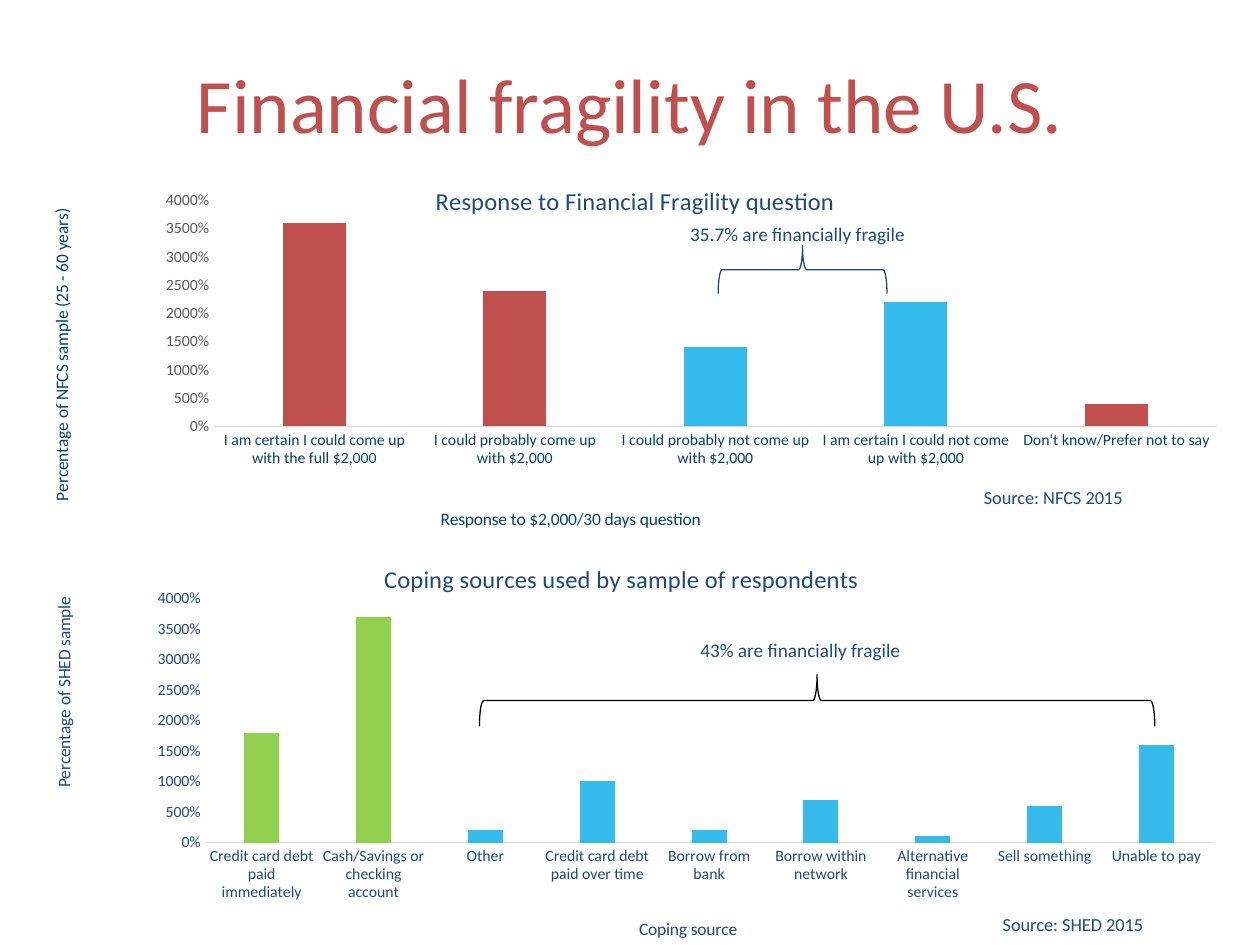
from dataclasses import dataclass

from pptx import Presentation
from pptx.chart.data import CategoryChartData
from pptx.dml.color import RGBColor
from pptx.enum.chart import XL_CHART_TYPE, XL_TICK_MARK
from pptx.enum.shapes import MSO_SHAPE
from pptx.enum.text import MSO_ANCHOR, PP_ALIGN
from pptx.oxml import parse_xml
from pptx.oxml.ns import nsdecls, qn
from pptx.util import Inches, Pt


@dataclass(frozen=True)
class Theme:
    font: str = "Calibri"
    red: str = "C0504D"
    blue: str = "35BAEC"
    green: str = "92D050"
    navy: str = "1F497D"
    teal: str = "054166"
    grey: str = "595959"
    rule: str = "D9D9D9"
    black: str = "000000"
    white: str = "FFFFFF"
    title: float = 44
    chart_title: float = 14
    note: float = 11
    source: float = 10.5
    axis_title: float = 10
    tick: float = 9
    line: float = 0.75


@dataclass(frozen=True)
class Box:
    """Left, top, width and height in percent of the slide."""
    left: float
    top: float
    width: float
    height: float


@dataclass(frozen=True)
class Label:
    """A chart title placed by shares of the chart's size."""
    text: str
    x: float
    y: float
    color: str


@dataclass(frozen=True)
class Bar:
    name: str
    value: float
    color: str


@dataclass(frozen=True)
class Panel:
    box: Box
    plot: tuple[float, float, float, float]
    title: Label
    cat_title: Label
    val_title: Label
    cat_color: str
    val_color: str
    bars: list[Bar]


@dataclass(frozen=True)
class Note:
    text: str
    box: Box
    size: float


@dataclass(frozen=True)
class Brace:
    box: Box
    color: str


T = Theme()
WIDTH, HEIGHT = Inches(10), Inches(7.5)

PANELS = [
    Panel(
        Box(1.8, 16.67, 96.8, 39.87), (0.157, 0.115, 0.822, 0.606),
        Label("Response to Financial Fragility question", 0.335, 0.06, T.navy),
        Label("Response to $2,000/30 days question", 0.34, 0.93, T.teal),
        Label("Percentage of NFCS sample (25 - 60 years)", 0.02, 0.137, T.teal),
        T.teal, T.grey,
        [
            Bar("I am certain I could come up with the full $2,000", 36, T.red),
            Bar("I could probably come up with $2,000", 24, T.red),
            Bar("I could probably not come up with $2,000", 14, T.blue),
            Bar("I am certain I could not come up with $2,000", 22, T.blue),
            Bar("Don't know/Prefer not to say", 4, T.red),
        ],
    ),
    Panel(
        Box(0, 56.53, 97.8, 43.47), (0.167, 0.159, 0.817, 0.602),
        Label("Coping sources used by sample of respondents", 0.308, 0.058, T.navy),
        Label("Coping source", 0.516, 0.94, T.navy),
        Label("Percentage of SHED sample", 0.04, 0.153, T.navy),
        T.navy, T.navy,
        [
            Bar("Credit card debt paid immediately", 18, T.green),
            Bar("Cash/Savings or checking account", 37, T.green),
            Bar("Other", 2, T.blue),
            Bar("Credit card debt paid over time", 10, T.blue),
            Bar("Borrow from bank", 2, T.blue),
            Bar("Borrow within network", 7, T.blue),
            Bar("Alternative financial services", 1, T.blue),
            Bar("Sell something", 6, T.blue),
            Bar("Unable to pay", 16, T.blue),
        ],
    ),
]
BRACES = [
    Brace(Box(61.8, 19.6, 3.8, 17.87), T.navy),
    Brace(Box(62.8, 38.4, 4.1, 71.47), T.black),
]
NOTES = [
    Note("Source: SHED 2015", Box(78.6, 96, 19.3, 3.87), T.source),
    Note("Source: NFCS 2015", Box(77.1, 50.8, 18.3, 3.87), T.source),
    Note("35.7% are financially fragile", Box(53.8, 23.2, 24.4, 0.93), T.note),
    Note("43% are financially fragile", Box(54.6, 66.93, 25.7, 3.87), T.note),
]


def rgb(color: str) -> RGBColor:
    return RGBColor.from_string(color)


def place(box: Box) -> tuple[int, int, int, int]:
    return (int(WIDTH * box.left / 100), int(HEIGHT * box.top / 100),
            int(WIDTH * box.width / 100), int(HEIGHT * box.height / 100))


def set_font(font, size: float, color: str) -> None:
    font.name, font.size, font.bold = T.font, Pt(size), False
    font.color.rgb = rgb(color)


def set_layout(element, index: int, x: float, y: float, size=(), target: str = "") -> None:
    old = element.find(qn("c:layout"))
    if old is not None:
        element.remove(old)
    inner = f'<c:layoutTarget val="{target}"/>' if target else ""
    inner += '<c:xMode val="edge"/><c:yMode val="edge"/>'
    inner += "".join(f'<c:{tag} val="{value}"/>' for tag, value in zip("xywh", (x, y, *size)))
    element.insert(index, parse_xml(
        f'<c:layout {nsdecls("c")}><c:manualLayout>{inner}</c:manualLayout></c:layout>'))


def set_title(title, label: Label, size: float, rotation: int = 0) -> None:
    tf = title.text_frame
    tf.text = label.text
    set_font(tf.paragraphs[0].font, size, label.color)
    body = title._element.find(".//" + qn("a:bodyPr"))
    body.set("rot", str(rotation))
    body.set("vert", "horz")
    set_layout(title._element, 1, label.x, label.y)


def add_panel(slide, panel: Panel) -> None:
    data = CategoryChartData()
    data.categories = [bar.name for bar in panel.bars]
    data.add_series("Series 1", [bar.value for bar in panel.bars])
    chart = slide.shapes.add_chart(XL_CHART_TYPE.COLUMN_CLUSTERED, *place(panel.box), data).chart
    chart.has_legend = False
    set_font(chart.font, T.axis_title, T.black)
    set_title(chart.chart_title, panel.title, T.chart_title)

    cat, val = chart.category_axis, chart.value_axis
    for axis, color in ((cat, panel.cat_color), (val, panel.val_color)):
        axis.major_tick_mark = axis.minor_tick_mark = XL_TICK_MARK.NONE
        axis.has_major_gridlines = False
        set_font(axis.tick_labels.font, T.tick, color)
    set_title(cat.axis_title, panel.cat_title, T.axis_title)
    set_title(val.axis_title, panel.val_title, T.axis_title, -5400000)
    cat.format.line.color.rgb = rgb(T.rule)
    cat.format.line.width = Pt(T.line)
    val.format.line.fill.background()
    val.minimum_scale, val.maximum_scale, val.major_unit = 0, 40, 5
    val.tick_labels.number_format = "0%"
    val.tick_labels.number_format_is_linked = False

    plot = chart.plots[0]
    plot.gap_width, plot.overlap, plot.vary_by_categories = 219, -27, False
    for i, bar in enumerate(panel.bars):
        fill = plot.series[0].points[i].format.fill
        fill.solid()
        fill.fore_color.rgb = rgb(bar.color)
    area = chart._chartSpace.find(".//" + qn("c:plotArea"))
    set_layout(area, 0, *panel.plot[:2], panel.plot[2:], "inner")
    area.append(parse_xml(f'<c:spPr {nsdecls("c", "a")}><a:solidFill>'
                          f'<a:srgbClr val="{T.white}"/></a:solidFill></c:spPr>'))


def add_brace(slide, brace: Brace) -> None:
    sp = slide.shapes.add_shape(MSO_SHAPE.RIGHT_BRACE, *place(brace.box))
    sp.rotation = 270
    sp.shadow.inherit = False
    sp.fill.background()
    sp.line.color.rgb = rgb(brace.color)
    sp.line.width = Pt(T.line)


def add_note(slide, note: Note) -> None:
    tf = slide.shapes.add_textbox(*place(note.box)).text_frame
    tf.word_wrap = True
    p = tf.paragraphs[0]
    p.text = note.text
    set_font(p.font, note.size, T.navy)


def add_title(slide, text: str, box: Box) -> None:
    sp = slide.shapes.title
    sp.left, sp.top, sp.width, sp.height = place(box)
    tf = sp.text_frame
    tf.vertical_anchor = MSO_ANCHOR.MIDDLE
    p = tf.paragraphs[0]
    p.text, p.alignment = text, PP_ALIGN.CENTER
    set_font(p.font, T.title, T.red)


def main() -> None:
    prs = Presentation()
    prs.slide_width, prs.slide_height = WIDTH, HEIGHT
    slide = prs.slides.add_slide(prs.slide_layouts[5])
    add_title(slide, "Financial fragility in the U.S.", Box(5, 4, 90, 13.73))
    for panel in PANELS:
        add_panel(slide, panel)
    for brace in BRACES:
        add_brace(slide, brace)
    for note in NOTES:
        add_note(slide, note)
    prs.save("out.pptx")


if __name__ == "__main__":
    main()
